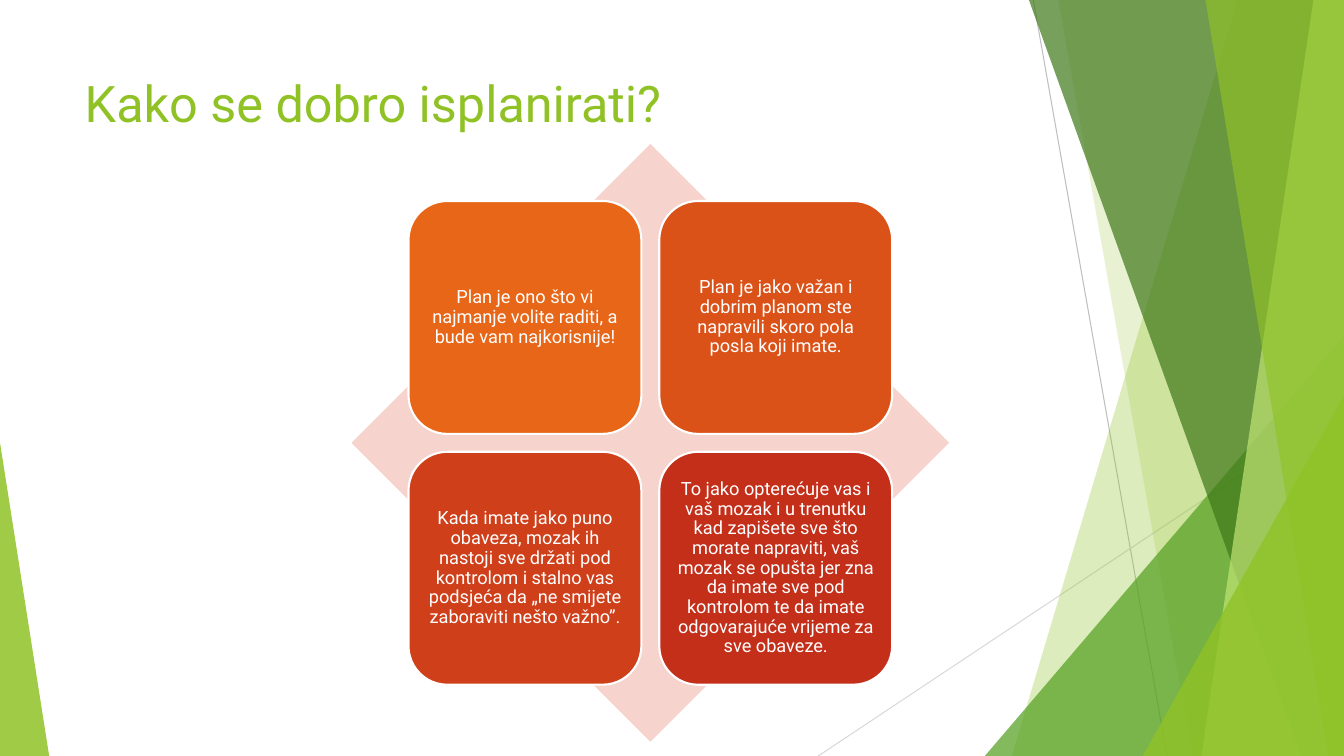
from dataclasses import dataclass

from lxml.etree import SubElement
from pptx import Presentation
from pptx.dml.color import RGBColor as RGB
from pptx.enum.shapes import MSO_CONNECTOR as CONN, MSO_SHAPE as SHAPE
from pptx.enum.text import MSO_ANCHOR as ANCHOR, MSO_AUTO_SIZE as AUTO, PP_ALIGN as ALIGN
from pptx.oxml.ns import qn
from pptx.util import Cm, Pt

TITLE = "Kako se dobro isplanirati?"
TILES = [
    ("Plan je ono što vi najmanje volite raditi, a bude vam najkorisnije!", "E76618"),
    ("Plan je jako važan i dobrim planom ste napravili skoro pola posla koji imate.", "DB5219"),
    ("Kada imate jako puno obaveza, mozak ih nastoji sve držati pod kontrolom i stalno "
     "vas podsjeća da „ne smijete zaboraviti nešto važno”.", "CF3F1A"),
    ("To jako opterećuje vas i vaš mozak i u trenutku kad zapišete sve što morate "
     "napraviti, vaš mozak se opušta jer zna da imate sve pod kontrolom te da imate "
     "odgovarajuće vrijeme za sve obaveze.", "C42F1A"),
]


@dataclass(frozen=True)
class Theme:
    font: str = "Roboto"
    title_size: float = 36
    tile_size: float = 13
    line_width: float = 0.75
    tile_border: float = 1.5
    lime: str = "90C226"
    green: str = "54A021"
    forest: str = "3F7819"
    pale_lime: str = "C0E474"
    diamond: str = "F6D3CC"
    white: str = "FFFFFF"


T = Theme()
WIDTH, HEIGHT = 33.87, 19.05

# Lines: x1, y1, x2, y2, colour
RAYS = [(26.04, 0, 29.41, HEIGHT, "BFBFBF"), (WIDTH, 10.24, 20.62, HEIGHT, "D9D9D9")]

# Back to front. A band runs from its top x and bottom x to the right edge;
# a wedge is left, top, width, apex position, and ends at the bottom edge.
FACETS = [
    ("band", (31.19, 25.5), T.lime, 30),
    ("band", (26.67, 30.05), T.lime, 20),
    ("wedge", (24.82, 8.46, 9.05, 1), T.green, 72),
    ("band", (25.93, 32.79), T.forest, 70),
    ("band", (33.1, 30.28), T.pale_lime, 70),
    ("band", (30.38, 33.48), T.lime, 65),
    ("wedge", (28.8, 9.98, 5.07, 1), T.lime, 80),
    ("wedge", (0, 11.15, 1.24, 0), T.lime, 85),
]

TITLE_BOX = (1.88, 1.7, 23.88, 2.49)
CENTRE_X, CENTRE_Y = 16.39, 11.16
DIAMOND, TILE, GAP = 15.06, 5.87, 0.45
TILE_INSET = 0.13


def set_all(obj, **values):
    for name, value in values.items():
        setattr(obj, name, value)


def paint(sp, colour, opacity=100):
    sp.shadow.inherit = False
    sp.fill.solid()
    sp.fill.fore_color.rgb = RGB.from_string(colour)
    sp.line.fill.background()
    if opacity < 100:
        clr = sp._element.spPr.find(qn("a:solidFill"))[0]
        SubElement(clr, qn("a:alpha"), val=str(opacity * 1000))


def write(sp, text, size, colour, align, anchor, inset=None):
    tf = sp.text_frame
    set_all(tf, word_wrap=True, auto_size=AUTO.NONE, vertical_anchor=anchor)
    if inset is not None:
        sides = ("left", "top", "right", "bottom")
        set_all(tf, **{f"margin_{side}": Cm(inset) for side in sides})
    p = tf.paragraphs[0]
    p.alignment = align
    r = p.add_run()
    r.text = text
    set_all(r.font, name=T.font, size=Pt(size))
    r.font.color.rgb = RGB.from_string(colour)
    return p


def add_ray(shapes, x1, y1, x2, y2, colour):
    ray = shapes.add_connector(CONN.STRAIGHT, Cm(x1), Cm(y1), Cm(x2), Cm(y2))
    ray.line.width = Pt(T.line_width)
    ray.line.color.rgb = RGB.from_string(colour)
    SubElement(ray._element.spPr, qn("a:effectLst"))


def add_band(shapes, top_x, bottom_x):
    corners = [(WIDTH, 0), (WIDTH, HEIGHT), (bottom_x, HEIGHT)]
    outline = shapes.build_freeform(Cm(top_x), 0)
    outline.add_line_segments([(Cm(x), Cm(y)) for x, y in corners], close=True)
    return outline.convert_to_shape()


def add_wedge(shapes, left, top, width, apex):
    sp = shapes.add_shape(SHAPE.ISOSCELES_TRIANGLE, Cm(left), Cm(top),
                          Cm(width), Cm(HEIGHT - top))
    sp.adjustments[0] = apex
    return sp


def add_square(shapes, kind, left, top, side, colour):
    sp = shapes.add_shape(kind, Cm(left), Cm(top), Cm(side), Cm(side))
    paint(sp, colour)
    return sp


def add_matrix(shapes):
    """Four rounded tiles in a two by two grid, centred on a diamond."""
    add_square(shapes, SHAPE.DIAMOND, CENTRE_X - DIAMOND / 2, CENTRE_Y - DIAMOND / 2,
               DIAMOND, T.diamond)
    left, top = (c - TILE - GAP / 2 for c in (CENTRE_X, CENTRE_Y))
    for i, (text, colour) in enumerate(TILES):
        row, col = divmod(i, 2)
        sp = add_square(shapes, SHAPE.ROUNDED_RECTANGLE, left + col * (TILE + GAP),
                        top + row * (TILE + GAP), TILE, colour)
        sp.line.color.rgb = RGB.from_string(T.white)
        sp.line.width = Pt(T.tile_border)
        p = write(sp, text, T.tile_size, T.white, ALIGN.CENTER, ANCHOR.MIDDLE, TILE_INSET)
        p.line_spacing = 0.9


def main():
    prs = Presentation()
    set_all(prs, slide_width=Cm(WIDTH), slide_height=Cm(HEIGHT))
    shapes = prs.slides.add_slide(prs.slide_layouts[5]).shapes
    for ray in RAYS:
        add_ray(shapes, *ray)
    builders = {"band": add_band, "wedge": add_wedge}
    for kind, place, colour, opacity in FACETS:
        paint(builders[kind](shapes, *place), colour, opacity)

    title = shapes.title
    set_all(title, **dict(zip(("left", "top", "width", "height"), map(Cm, TITLE_BOX))))
    write(title, TITLE, T.title_size, T.lime, ALIGN.LEFT, ANCHOR.TOP)
    add_matrix(shapes)
    prs.save("out.pptx")


if __name__ == "__main__":
    main()
